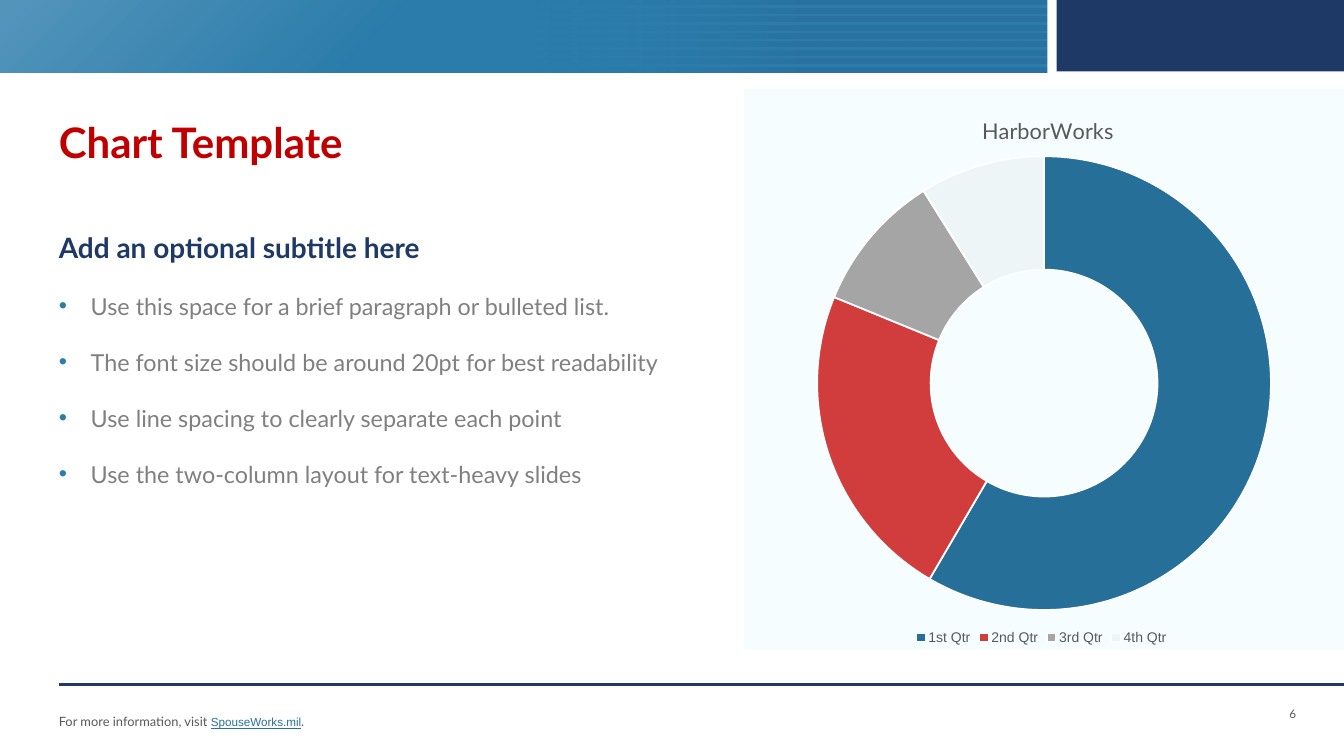
from dataclasses import dataclass

import lxml.etree
import pptx
import pptx.chart.data
import pptx.dml.color
import pptx.enum.chart
import pptx.enum.shapes
import pptx.enum.text
import pptx.oxml
import pptx.oxml.ns
import pptx.util

Inches = pptx.util.Inches
Pt = pptx.util.Pt
Align = pptx.enum.text.PP_ALIGN
Anchor = pptx.enum.text.MSO_ANCHOR
qn = pptx.oxml.ns.qn


@dataclass(frozen=True)
class Theme:
    navy: str = "1F3967"
    blue: str = "2C7DAC"
    link: str = "27729C"
    red: str = "C00000"
    gray: str = "808080"
    dark_gray: str = "595959"
    white: str = "FFFFFF"
    chart_area: str = "F6FDFF"
    slices: tuple[str, ...] = ("256F99", "D13C3D", "A5A5A5", "EEF5F7")
    heading_font: str = "Lato"
    plain_font: str = "Arial"
    title_size: float = 36
    subtitle_size: float = 24
    body_size: float = 20
    chart_title_size: float = 18.6
    legend_size: float = 12
    footer_size: float = 11
    small_size: float = 10


THEME = Theme()


@dataclass(frozen=True)
class Box:
    left: float
    top: float
    width: float
    height: float

    def lengths(self) -> list[int]:
        return [Inches(n) for n in (self.left, self.top, self.width, self.height)]


@dataclass(frozen=True)
class Stop:
    position: int
    color: str
    opacity: int = 100


@dataclass(frozen=True)
class Band:
    box: Box
    color: str = ""
    stops: tuple[Stop, ...] = ()
    angle: int = 0


@dataclass(frozen=True)
class Words:
    text: str
    size: float
    color: str
    font: str = THEME.heading_font
    bold: bool = False
    underline: bool = False


STRIPE_STOPS = (Stop(39, THEME.blue, 0), Stop(61, THEME.navy, 15))
BANNER = [
    Band(Box(0, 0, 12.55, 0.87), stops=(Stop(0, THEME.blue, 80), Stop(37, THEME.blue)), angle=45),
    *[Band(Box(0.66, 0.1 * row, 14.57, 0.06), stops=STRIPE_STOPS, angle=9) for row in range(9)],
    Band(Box(12.47, 0, 3.53, 0.96), THEME.white),
    Band(Box(12.58, 0, 3.42, 0.85), THEME.navy),
]
BULLETS = [
    "Use this space for a brief paragraph or bulleted list.",
    "The font size should be around 20pt for best readability",
    "Use line spacing to clearly separate each point",
    "Use the two-column layout for text-heavy slides",
]
FOOTER = [
    Words("For more information, visit ", THEME.footer_size, THEME.dark_gray),
    Words("SpouseWorks.mil", THEME.small_size, THEME.link, THEME.plain_font, underline=True),
    Words(".", THEME.footer_size, THEME.dark_gray),
]
QUARTERS = {"1st Qtr": 59, "2nd Qtr": 23, "3rd Qtr": 10, "4th Qtr": 9}


def rgb(color: str) -> pptx.dml.color.RGBColor:
    return pptx.dml.color.RGBColor.from_string(color)


def add_band(slide, band: Band) -> None:
    shape = slide.shapes.add_shape(pptx.enum.shapes.MSO_SHAPE.RECTANGLE, *band.box.lengths())
    shape.shadow.inherit = False
    shape.line.fill.background()
    if not band.stops:
        shape.fill.solid()
        shape.fill.fore_color.rgb = rgb(band.color)
        return
    shape.fill.gradient()
    shape.fill.gradient_angle = 360 - band.angle
    for target, stop in zip(shape.fill.gradient_stops, band.stops):
        target.position = stop.position / 100
        target.color.rgb = rgb(stop.color)
    colors = shape.element.spPr.iter(qn("a:srgbClr"))
    for color, stop in zip(colors, band.stops):
        lxml.etree.SubElement(color, qn("a:alpha"), val=str(stop.opacity * 1000))


def add_text_frame(slide, box: Box, anchor: Anchor):
    frame = slide.shapes.add_textbox(*box.lengths()).text_frame
    frame.word_wrap = True
    frame.vertical_anchor = anchor
    frame.margin_left = frame.margin_right = frame.margin_top = frame.margin_bottom = 0
    return frame


def style_font(font, words: Words) -> None:
    font.name = words.font
    font.size = Pt(words.size)
    font.bold = words.bold
    font.underline = words.underline
    font.color.rgb = rgb(words.color)


def write(paragraph, *parts: Words) -> None:
    for words in parts:
        run = paragraph.add_run()
        run.text = words.text
        style_font(run.font, words)


def add_bullet(paragraph) -> None:
    properties = paragraph._p.get_or_add_pPr()
    indent = Inches(0.38)
    properties.set("marL", str(indent))
    properties.set("indent", str(-indent))
    color = lxml.etree.SubElement(properties, qn("a:buClr"))
    lxml.etree.SubElement(color, qn("a:srgbClr"), val=THEME.blue)
    lxml.etree.SubElement(properties, qn("a:buFont"), typeface=THEME.plain_font)
    lxml.etree.SubElement(properties, qn("a:buChar"), char="•")


def place_chart_part(part, index: int, **fractions: float) -> None:
    for old in part.findall(qn("c:layout")):
        part.remove(old)
    layout = pptx.oxml.parse_xml(f'<c:layout {pptx.oxml.ns.nsdecls("c")}/>')
    manual = lxml.etree.SubElement(layout, qn("c:manualLayout"))
    if "w" in fractions:
        lxml.etree.SubElement(manual, qn("c:layoutTarget"), val="inner")
    for axis in ("x", "y"):
        lxml.etree.SubElement(manual, qn(f"c:{axis}Mode"), val="edge")
    for name, value in fractions.items():
        lxml.etree.SubElement(manual, qn(f"c:{name}"), val=str(value))
    part.insert(index, layout)


def add_doughnut(slide) -> None:
    data = pptx.chart.data.CategoryChartData()
    data.categories = list(QUARTERS)
    data.add_series("Series 1", list(QUARTERS.values()))
    kind = pptx.enum.chart.XL_CHART_TYPE.DOUGHNUT
    chart = slide.shapes.add_chart(kind, *Box(8.86, 1.06, 7.14, 6.67).lengths(), data).chart
    chart.font.name = THEME.plain_font
    chart.font.size = Pt(THEME.small_size)
    chart.has_title = True
    write(chart.chart_title.text_frame.paragraphs[0],
          Words("HarborWorks", THEME.chart_title_size, THEME.dark_gray))
    chart.has_legend = True
    chart.legend.position = pptx.enum.chart.XL_LEGEND_POSITION.BOTTOM
    chart.legend.include_in_layout = False
    style_font(chart.legend.font, Words("", THEME.legend_size, THEME.dark_gray, THEME.plain_font))
    plot = chart.plots[0]
    plot.vary_by_categories = True
    for index, color in enumerate(THEME.slices):
        slice_format = plot.series[0].points[index].format
        slice_format.fill.solid()
        slice_format.fill.fore_color.rgb = rgb(color)
        slice_format.line.color.rgb = rgb(THEME.white)
        slice_format.line.width = Pt(1.5)

    root = chart._chartSpace
    next(root.iter(qn("c:holeSize"))).set("val", "75")
    place_chart_part(next(root.iter(qn("c:title"))), 1, x=0.39, y=0.04)
    place_chart_part(next(root.iter(qn("c:plotArea"))), 0, x=0.12, y=0.12, w=0.76, h=0.81)
    place_chart_part(next(root.iter(qn("c:legend"))), 1, x=0.28, y=0.96)
    area = pptx.oxml.parse_xml(
        f'<c:spPr {pptx.oxml.ns.nsdecls("c", "a")}><a:solidFill><a:srgbClr val="{THEME.chart_area}"/>'
        "</a:solidFill><a:ln><a:noFill/></a:ln></c:spPr>")
    root.find(qn("c:chart")).addnext(area)


def add_rule(slide) -> None:
    straight = pptx.enum.shapes.MSO_CONNECTOR.STRAIGHT
    rule = slide.shapes.add_connector(straight, Inches(0.7), Inches(8.15), Inches(16), Inches(8.15))
    rule.line.color.rgb = rgb(THEME.navy)
    rule.line.width = Pt(2)
    lxml.etree.SubElement(rule.element.spPr, qn("a:effectLst"))


def add_body(slide) -> None:
    frame = add_text_frame(slide, Box(0.7, 2.74, 7.85, 5), Anchor.TOP)
    subtitle = frame.paragraphs[0]
    subtitle.space_after = Pt(12)
    write(subtitle, Words("Add an optional subtitle here", THEME.subtitle_size, THEME.navy, bold=True))
    for text in BULLETS:
        paragraph = frame.add_paragraph()
        paragraph.space_before = paragraph.space_after = Pt(12)
        add_bullet(paragraph)
        write(paragraph, Words(text, THEME.body_size, THEME.gray))


def main() -> None:
    presentation = pptx.Presentation()
    presentation.slide_width, presentation.slide_height = Inches(16), Inches(9)
    slide = presentation.slides.add_slide(presentation.slide_layouts[6])
    add_rule(slide)
    footer = add_text_frame(slide, Box(0.7, 8.35, 8.16, 0.48), Anchor.MIDDLE)
    write(footer.paragraphs[0], *FOOTER)
    for band in BANNER:
        add_band(slide, band)
    title = add_text_frame(slide, Box(0.7, 1.06, 7.85, 1.37), Anchor.MIDDLE).paragraphs[0]
    title.line_spacing = 0.8
    title.space_after = Pt(14.7)
    write(title, Words("Chart Template", THEME.title_size, THEME.red, bold=True))
    add_body(slide)
    number = add_text_frame(slide, Box(11.83, 8.26, 3.6, 0.48), Anchor.MIDDLE).paragraphs[0]
    number.alignment = Align.RIGHT
    write(number, Words("6", THEME.small_size, THEME.dark_gray))
    add_doughnut(slide)
    presentation.save("out.pptx")


if __name__ == "__main__":
    main()
